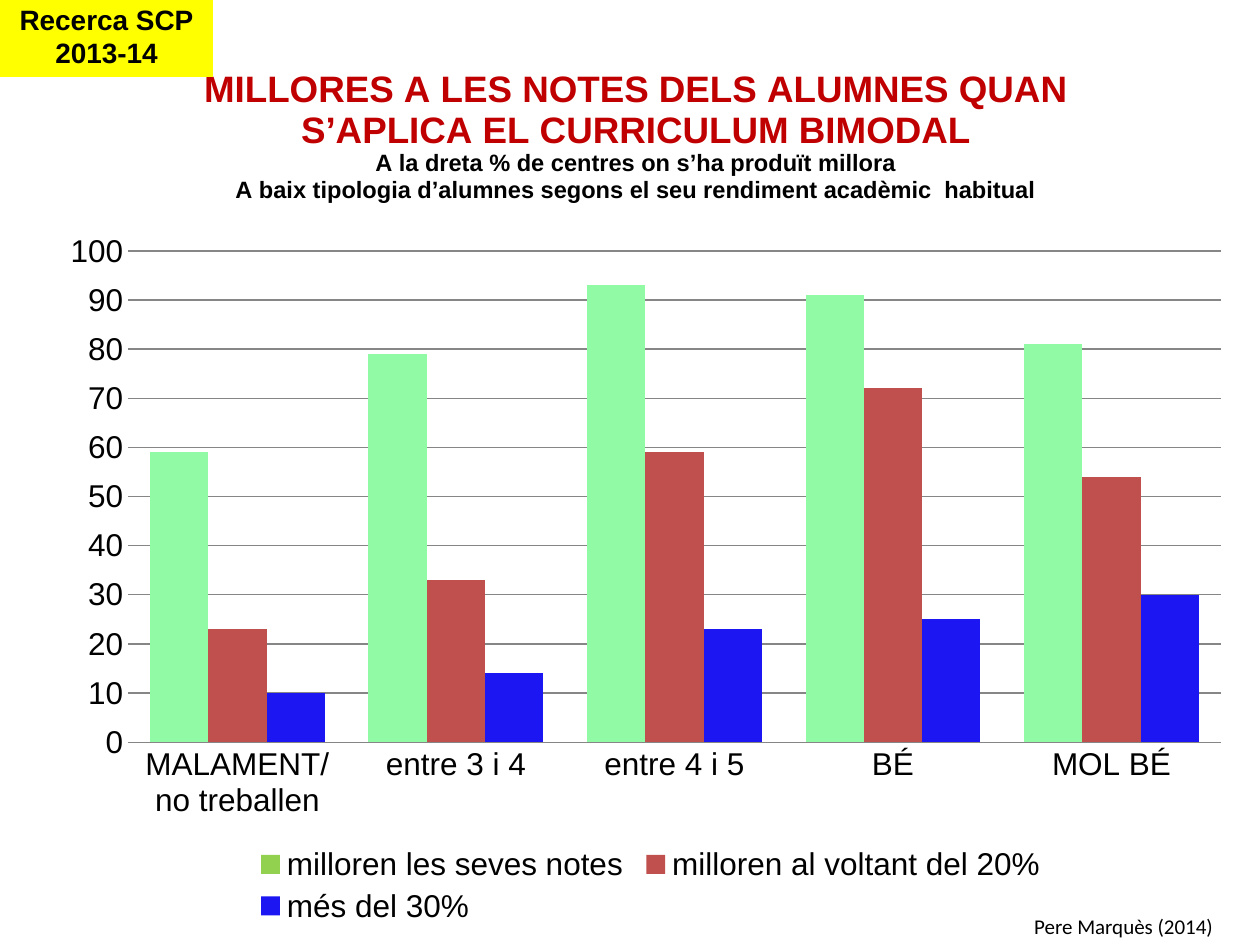
from dataclasses import dataclass

from pptx import Presentation
from pptx.chart.data import CategoryChartData
from pptx.dml.color import RGBColor
from pptx.enum.chart import XL_CHART_TYPE, XL_LEGEND_POSITION, XL_TICK_MARK
from pptx.enum.shapes import MSO_SHAPE
from pptx.enum.text import MSO_ANCHOR, PP_ALIGN
from pptx.oxml import parse_xml
from pptx.oxml.ns import nsdecls, qn
from pptx.util import Inches, Pt


@dataclass(frozen=True)
class Theme:
    ink: str = "000000"
    red: str = "C00000"
    yellow: str = "FFFF00"
    grid: str = "868686"
    key: str = "92D050"
    bars: tuple = ("90FAA4", "C0504D", "1B16F2")
    sans: str = "Arial"
    note: str = "Calibri"
    head: float = 21
    sub: float = 13.5
    body: float = 18
    tag: float = 16
    small: float = 12


THEME = Theme()
GROUPS = ("MALAMENT/no treballen", "entre 3 i 4", "entre 4 i 5", "BÉ", "MOL BÉ")
SERIES = (
    ("milloren les seves notes", (59, 79, 93, 91, 81)),
    ("milloren al voltant del 20%", (23, 33, 59, 72, 54)),
    ("més del 30%", (10, 14, 23, 25, 30)),
)


def color(code):
    return RGBColor.from_string(code)


def style(font, size, face=THEME.sans, code=THEME.ink, bold=False):
    font.size = Pt(size)
    font.name = face
    font.bold = bold
    font.color.rgb = color(code)


def write(para, text, *args, **kwargs):
    run = para.add_run()
    run.text = text
    style(run.font, *args, **kwargs)


def paint(fill, code):
    fill.solid()
    fill.fore_color.rgb = color(code)


def place(node, index, inner=False, **parts):
    old = node.find(qn("c:layout"))
    if old is not None:
        node.remove(old)
    target = '<c:layoutTarget val="inner"/>' if inner else ""
    modes = '<c:xMode val="edge"/><c:yMode val="edge"/>'
    sizes = "".join(f'<c:{key} val="{val}"/>' for key, val in parts.items())
    node.insert(index, parse_xml(
        f'<c:layout {nsdecls("c")}><c:manualLayout>{target}{modes}{sizes}'
        "</c:manualLayout></c:layout>"))


def add_title(chart):
    title = chart.chart_title
    frame = title.text_frame
    lines = (
        ("MILLORES A LES NOTES DELS ALUMNES QUAN S’APLICA EL CURRICULUM BIMODAL",
         THEME.head, THEME.red),
        ("A la dreta % de centres on s’ha produït millora", THEME.sub, THEME.ink),
        ("A baix tipologia d’alumnes segons el seu rendiment acadèmic  habitual",
         THEME.sub, THEME.ink),
    )
    for row, (text, size, code) in enumerate(lines):
        para = frame.add_paragraph() if row else frame.paragraphs[0]
        para.alignment = PP_ALIGN.CENTER
        write(para, text, size, code=code, bold=True)
    title.include_in_layout = False
    place(title._element, 1, x=0.13, y=0.03)


def add_axes(chart):
    groups, scale = chart.category_axis, chart.value_axis
    for axis in (groups, scale):
        axis.major_tick_mark = axis.minor_tick_mark = XL_TICK_MARK.NONE
        style(axis.tick_labels.font, THEME.body)
    groups.format.line.color.rgb = color(THEME.grid)
    scale.minimum_scale, scale.maximum_scale, scale.major_unit = 0, 100, 10
    scale.format.line.fill.background()
    scale.tick_labels.number_format = "0"
    scale.tick_labels.number_format_is_linked = False
    scale.major_gridlines.format.line.color.rgb = color(THEME.grid)


def add_bars(slide, left, top, width, height):
    data = CategoryChartData(number_format="0")
    data.categories = GROUPS
    for name, vals in SERIES:
        data.add_series(name, vals)
    chart = slide.shapes.add_chart(
        XL_CHART_TYPE.COLUMN_CLUSTERED, left, top, width, height, data).chart
    style(chart.font, THEME.body)
    add_title(chart)
    add_axes(chart)
    plot = chart.plots[0]
    plot.gap_width, plot.overlap = 75, 0
    plot.vary_by_categories = False
    for series, code in zip(plot.series, THEME.bars):
        series.invert_if_negative = False
        paint(series.format.fill, code)
    first = plot.series[0]
    paint(first.format.fill, THEME.key)
    for index in range(len(GROUPS)):
        paint(first.points[index].format.fill, THEME.bars[0])
    chart.has_legend = True
    legend = chart.legend
    legend.position = XL_LEGEND_POSITION.BOTTOM
    legend.include_in_layout = False
    style(legend.font, THEME.body)
    place(legend._element, 1, x=0.17, y=0.9, w=0.67, h=0.1)
    area = chart._chartSpace.chart.plotArea
    place(area, 0, inner=True, x=0.07, y=0.24, w=0.91, h=0.55)


def add_tag(slide, left, top, width, height):
    tag = slide.shapes.add_shape(MSO_SHAPE.RECTANGLE, left, top, width, height)
    tag.shadow.inherit = False
    paint(tag.fill, THEME.yellow)
    tag.line.fill.background()
    frame = tag.text_frame
    frame.word_wrap = True
    frame.vertical_anchor = MSO_ANCHOR.TOP
    for row, text in enumerate(("Recerca SCP", "2013-14")):
        para = frame.add_paragraph() if row else frame.paragraphs[0]
        para.alignment = PP_ALIGN.CENTER
        write(para, text, THEME.tag, bold=True)


def add_note(slide, left, top, width, height):
    frame = slide.shapes.add_textbox(left, top, width, height).text_frame
    frame.word_wrap = True
    write(frame.paragraphs[0], "Pere Marquès (2014)", THEME.small, THEME.note)


def main():
    deck = Presentation()
    deck.slide_width, deck.slide_height = Inches(10), Inches(7.5)
    slide = deck.slides.add_slide(deck.slide_layouts[6])
    add_bars(slide, Inches(0.35), Inches(0.29), Inches(9.53), Inches(7.09))
    add_note(slide, Inches(8.11), Inches(7.2), Inches(1.89), Inches(0.3))
    add_tag(slide, Inches(0), Inches(-0.03), Inches(1.69), Inches(0.64))
    deck.save("out.pptx")


if __name__ == "__main__":
    main()
